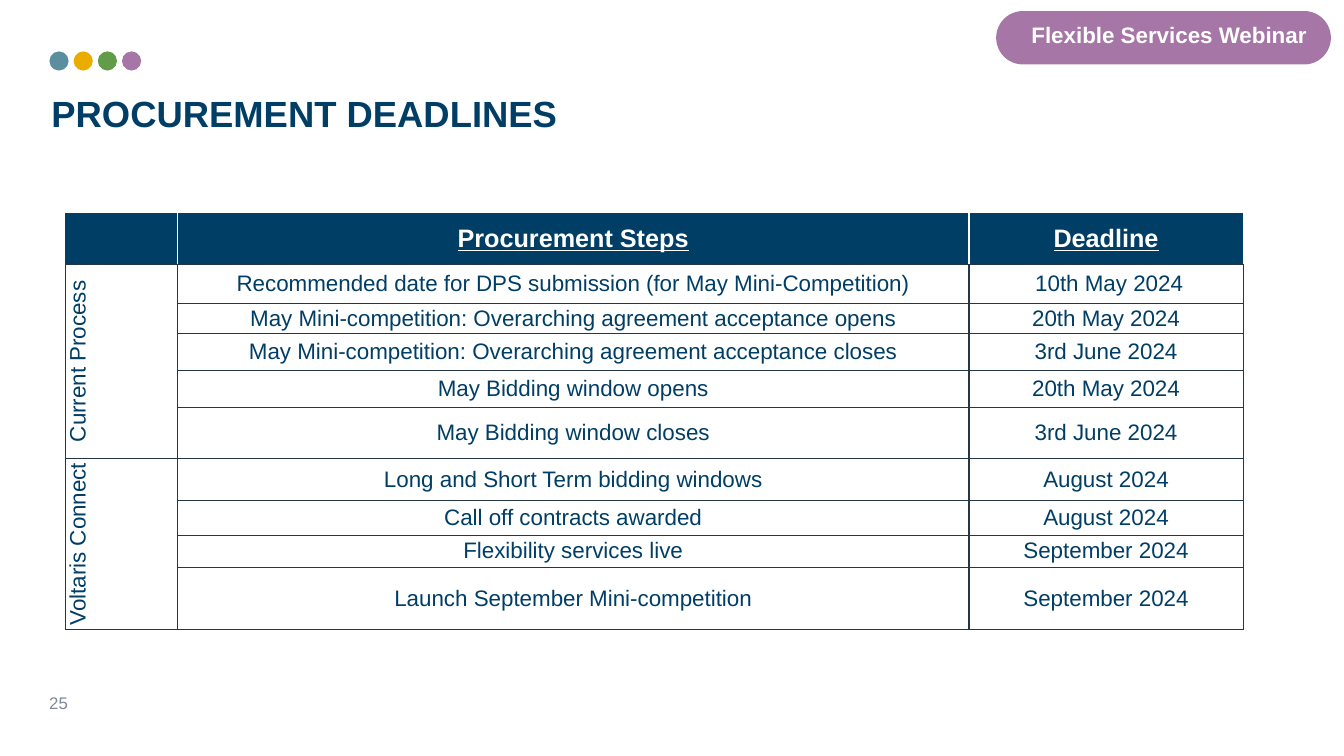
from lxml.etree import SubElement
from pptx import Presentation
from pptx.dml.color import RGBColor
from pptx.enum.shapes import MSO_SHAPE
from pptx.enum.text import MSO_ANCHOR, PP_ALIGN
from pptx.oxml.ns import qn
from pptx.util import Inches, Pt

COLORS = {
    "navy": "003E66", "border": "253746", "white": "FFFFFF", "grey": "808999",
    "teal": "5B8E9F", "amber": "EBAC00", "green": "629C49", "purple": "A677A6",
}
COLUMN_WIDTHS = [1.11, 7.85, 2.72]
ROW_HEIGHTS = [0.5, 0.39, 0.3, 0.37, 0.36, 0.51, 0.42, 0.34, 0.32, 0.62]
HEADER = ["", "Procurement Steps", "Deadline"]
PHASES = {
    "Current Process": [
        ("Recommended date for DPS submission (for May Mini-Competition)", "\N{NO-BREAK SPACE}10th May 2024"),
        ("May Mini-competition: Overarching agreement acceptance opens", "20th May 2024"),
        ("May Mini-competition: Overarching agreement acceptance closes", "3rd June 2024"),
        ("May Bidding window opens", "20th May 2024"),
        ("May Bidding window closes", "3rd June 2024"),
    ],
    "Voltaris Connect": [
        ("Long and Short Term bidding windows", "August 2024"),
        ("Call off contracts awarded", "August 2024"),
        ("Flexibility services live", "September 2024"),
        ("Launch September Mini-competition", "September 2024"),
    ],
}


def color(name):
    """Return the named colour."""
    return RGBColor.from_string(COLORS[name])


def format_text(paragraph, text, size, color_name, bold=False, underline=False):
    """Write text into a paragraph and set its font."""
    paragraph.text = text
    font = paragraph.font
    font.name, font.size = "Arial", Pt(size)
    font.bold, font.underline = bold, underline
    font.color.rgb = color(color_name)


def add_plain_shape(slide, kind, box, fill):
    """Add a filled preset shape without line or shadow."""
    shape = slide.shapes.add_shape(kind, *map(Inches, box))
    shape.shadow.inherit = False
    shape.fill.solid()
    shape.fill.fore_color.rgb = color(fill)
    shape.line.fill.background()
    return shape


def add_label(slide, box, text, size, color_name, bold=False, align=PP_ALIGN.LEFT):
    """Add a one-line text box."""
    frame = slide.shapes.add_textbox(*map(Inches, box)).text_frame
    frame.word_wrap = True
    frame.paragraphs[0].alignment = align
    format_text(frame.paragraphs[0], text, size, color_name, bold)


def add_dots(slide, left, top, width, diameter):
    """Spread the four brand dots evenly over the width."""
    names = ["teal", "amber", "green", "purple"]
    pitch = (width - diameter) / (len(names) - 1)
    for index, name in enumerate(names):
        add_plain_shape(slide, MSO_SHAPE.OVAL, (left + index * pitch, top, diameter, diameter), name)


def add_title(slide, left, top, width, height):
    """Place and format the title placeholder."""
    title = slide.shapes.title
    title.left, title.top, title.width, title.height = map(Inches, (left, top, width, height))
    frame = title.text_frame
    frame.margin_left = frame.margin_top = frame.margin_right = frame.margin_bottom = 0
    frame.vertical_anchor = MSO_ANCHOR.TOP
    paragraph = frame.paragraphs[0]
    paragraph.alignment = PP_ALIGN.LEFT
    paragraph.line_spacing = 0.9
    format_text(paragraph, "PROCUREMENT DEADLINES", 26, "navy", bold=True)


def add_banner(slide, left, top, width, height):
    """Add the rounded webinar banner and its label."""
    banner = add_plain_shape(slide, MSO_SHAPE.ROUNDED_RECTANGLE, (left, top, width, height), "purple")
    banner.adjustments[0] = 0.5
    add_label(slide, (left + 0.17, top + 0.05, width - 0.23, 0.37), "Flexible Services Webinar",
              16, "white", True, PP_ALIGN.CENTER)


def set_borders(cell, sides):
    """Draw one-point borders in the colour given for each side."""
    properties = cell._tc.get_or_add_tcPr()
    for index, (side, name) in enumerate(sides.items()):
        line = properties.makeelement(qn(f"a:ln{side}"), {"w": str(Pt(1))})
        SubElement(SubElement(line, qn("a:solidFill")), qn("a:srgbClr"), val=COLORS[name])
        properties.insert(index, line)


def format_cell(cell, text, is_header, sides):
    """Fill, border and write one table cell."""
    cell.margin_left = cell.margin_top = cell.margin_right = cell.margin_bottom = 0
    cell.vertical_anchor = MSO_ANCHOR.MIDDLE
    if is_header:
        cell.fill.solid()
        cell.fill.fore_color.rgb = color("navy")
    else:
        cell.fill.background()
    set_borders(cell, sides)
    paragraph = cell.text_frame.paragraphs[0]
    paragraph.alignment = PP_ALIGN.CENTER
    format_text(paragraph, text, 18 if is_header else 16, "white" if is_header else "navy",
                is_header, is_header)


def add_deadlines(slide, left, top):
    """Add the table of steps and deadlines grouped by phase."""
    rows = [HEADER]
    for phase, steps in PHASES.items():
        rows += [(phase if index == 0 else "", *step) for index, step in enumerate(steps)]
    size = map(Inches, (left, top, sum(COLUMN_WIDTHS), sum(ROW_HEIGHTS)))
    table = slide.shapes.add_table(len(rows), len(COLUMN_WIDTHS), *size).table
    table.first_row = table.horz_banding = False
    for column, width in zip(table.columns, COLUMN_WIDTHS):
        column.width = Inches(width)
    for row, height in zip(table.rows, ROW_HEIGHTS):
        row.height = Inches(height)
    last = len(COLUMN_WIDTHS) - 1
    for row_index, values in enumerate(rows):
        is_header = row_index == 0
        for column_index, text in enumerate(values):
            sides = dict.fromkeys("LRTB", "border")
            if is_header and column_index > 0:
                sides["L"] = "white"
            if is_header and column_index <= last:
                sides["R"] = "white"
            format_cell(table.cell(row_index, column_index), text, is_header, sides)
    first = 1
    for steps in PHASES.values():
        phase_cell = table.cell(first, 0)
        phase_cell.merge(table.cell(first + len(steps) - 1, 0))
        phase_cell._tc.get_or_add_tcPr().set("vert", "vert270")
        first += len(steps)


def main():
    """Build and save the slide."""
    presentation = Presentation()
    presentation.slide_width, presentation.slide_height = Inches(13.33), Inches(7.5)
    slide = presentation.slides.add_slide(presentation.slide_layouts[5])
    add_label(slide, (0.39, 6.82, 0.73, 0.3), "25", 12, "grey")
    add_dots(slide, 0.49, 0.51, 0.91, 0.19)
    add_title(slide, 0.51, 0.95, 5.79, 0.76)
    add_deadlines(slide, 0.65, 2.12)
    add_banner(slide, 9.88, 0.11, 3.32, 0.53)
    presentation.save("out.pptx")


if __name__ == "__main__":
    main()
